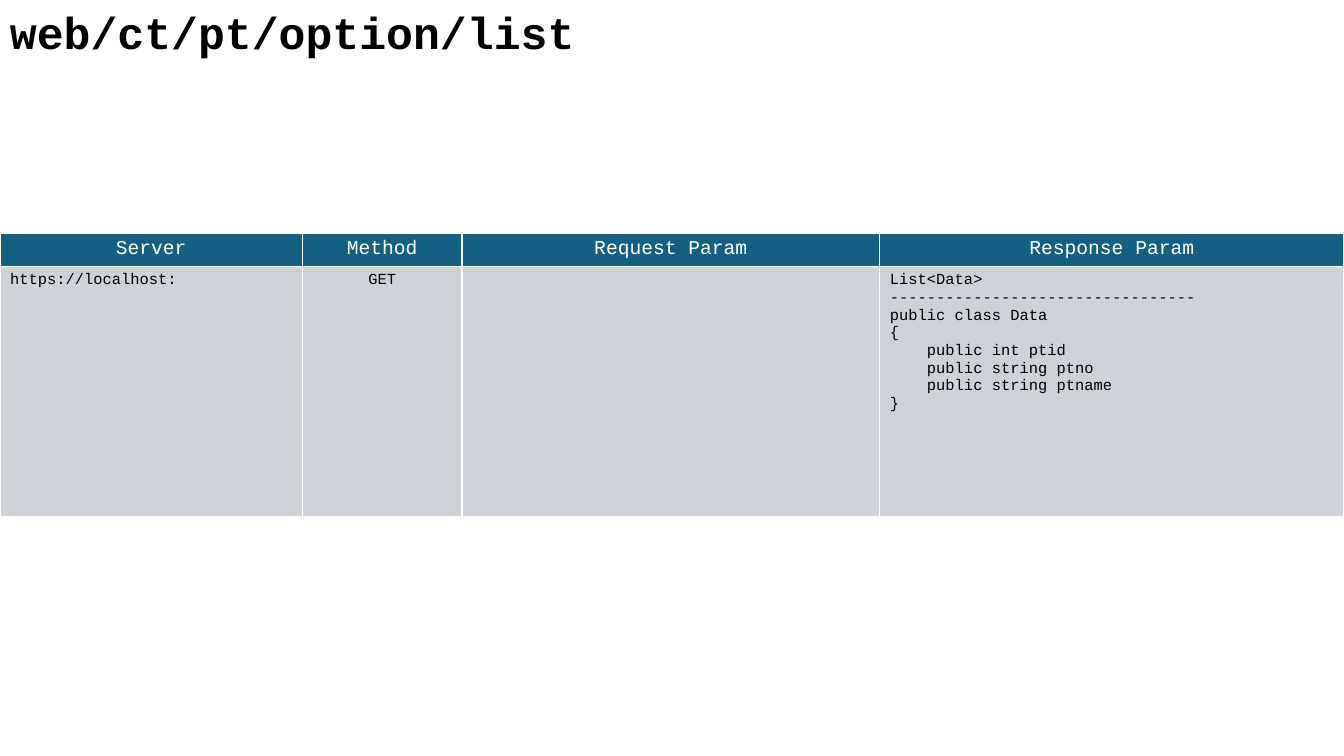
from dataclasses import dataclass

from lxml.etree import SubElement
from pptx import Presentation
from pptx.dml.color import RGBColor
from pptx.enum.text import MSO_AUTO_SIZE, PP_ALIGN
from pptx.oxml.ns import qn
from pptx.util import Emu, Pt

EMU_PER_PX = 9525


@dataclass(frozen=True)
class Theme:
    font: str = "Courier New"
    ink: str = "000000"
    header_ink: str = "FFFFFF"
    header_fill: str = "156082"
    body_fill: str = "CCD2D8"
    border: str = "FFFFFF"
    border_width: int = 1
    title_size: int = 32
    header_size: int = 14
    body_size: int = 11


THEME = Theme()

COLUMN_WIDTHS = [288, 152, 398, 442]
ROW_HEIGHTS = [31, 238]
HEADERS = ["Server", "Method", "Request Param", "Response Param"]
RESPONSE = """List<Data>
---------------------------------
public class Data
{
    public int ptid
    public string ptno
    public string ptname
}"""
ENDPOINT = ["https://localhost:", "GET", "", RESPONSE]
ENDPOINT_ALIGNMENTS = [PP_ALIGN.LEFT, PP_ALIGN.CENTER, PP_ALIGN.LEFT, PP_ALIGN.LEFT]


def px(length):
    return Emu(length * EMU_PER_PX)


def write_text(text_frame, text, size, color, alignment=PP_ALIGN.LEFT, bold=False):
    text_frame.text = text
    for paragraph in text_frame.paragraphs:
        paragraph.alignment = alignment
        font = paragraph.font
        font.name = THEME.font
        font.size = Pt(size)
        font.bold = bold
        font.color.rgb = RGBColor.from_string(color)


def add_title(slide, text):
    box = slide.shapes.add_textbox(px(0), px(0), px(907), px(61))
    box.text_frame.word_wrap = True
    box.text_frame.auto_size = MSO_AUTO_SIZE.SHAPE_TO_FIT_TEXT
    write_text(box.text_frame, text, THEME.title_size, THEME.ink, bold=True)


def add_borders(cell):
    properties = cell._tc.get_or_add_tcPr()
    for side in ("lnL", "lnR", "lnT", "lnB"):
        line = SubElement(properties, qn(f"a:{side}"), w=str(Pt(THEME.border_width)))
        fill = SubElement(line, qn("a:solidFill"))
        SubElement(fill, qn("a:srgbClr"), val=THEME.border)


def fill_row(row, texts, alignments, size, ink, fill):
    for cell, text, alignment in zip(row.cells, texts, alignments):
        add_borders(cell)
        cell.fill.solid()
        cell.fill.fore_color.rgb = RGBColor.from_string(fill)
        write_text(cell.text_frame, text, size, ink, alignment)


def add_endpoint_table(slide):
    frame = slide.shapes.add_table(
        len(ROW_HEIGHTS), len(COLUMN_WIDTHS),
        px(0), px(222), px(sum(COLUMN_WIDTHS)), px(sum(ROW_HEIGHTS)),
    )
    table = frame.table
    for column, width in zip(table.columns, COLUMN_WIDTHS):
        column.width = px(width)
    for row, height in zip(table.rows, ROW_HEIGHTS):
        row.height = px(height)
    header, body = table.rows
    fill_row(header, HEADERS, [PP_ALIGN.CENTER] * len(HEADERS),
             THEME.header_size, THEME.header_ink, THEME.header_fill)
    fill_row(body, ENDPOINT, ENDPOINT_ALIGNMENTS,
             THEME.body_size, THEME.ink, THEME.body_fill)


def main():
    presentation = Presentation()
    presentation.slide_width = px(1280)
    presentation.slide_height = px(720)
    slide = presentation.slides.add_slide(presentation.slide_layouts[6])
    add_title(slide, "web/ct/pt/option/list")
    add_endpoint_table(slide)
    presentation.save("out.pptx")


if __name__ == "__main__":
    main()
